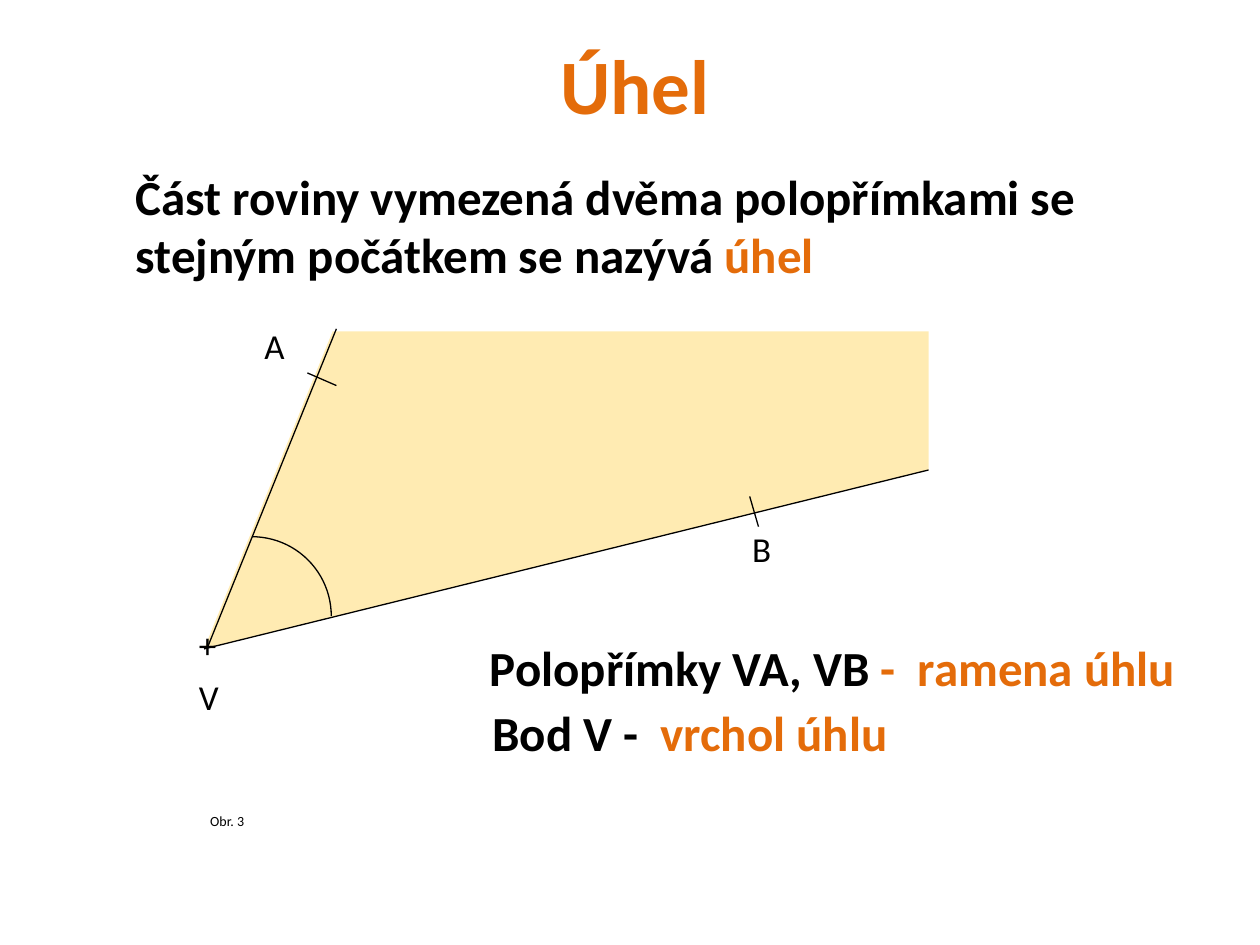
import pptx
import pptx.util
import pptx.dml.color
import pptx.enum.shapes
import pptx.enum.text
import pptx.oxml.ns
from lxml import etree

Inches = pptx.util.Inches
Align = pptx.enum.text.PP_ALIGN
Anchor = pptx.enum.text.MSO_ANCHOR
qn = pptx.oxml.ns.qn

COLORS = {"text": "000000", "accent": "E46C0A", "angle": "FFC000"}


def rgb(name):
    return pptx.dml.color.RGBColor.from_string(COLORS[name])


class SlideBuilder:
    font = "Calibri"
    line_width = pptx.util.Pt(0.75)

    def __init__(self, slide):
        self.shapes = slide.shapes

    def text(self, place, pieces, size, bold=False, align=Align.LEFT,
             anchor=Anchor.TOP, wrap=True, spacing=None):
        """Add a one-paragraph box; pieces are (wording, colour name) pairs."""
        box = self.shapes.add_textbox(*map(Inches, place))
        frame = box.text_frame
        frame.word_wrap = wrap
        frame.vertical_anchor = anchor
        para = frame.paragraphs[0]
        para.alignment = align
        para.line_spacing = spacing
        for wording, color in pieces:
            span = para.add_run()
            span.text = wording
            span.font.name = self.font
            span.font.size = pptx.util.Pt(size)
            span.font.bold = bold
            span.font.color.rgb = rgb(color)

    def point_label(self, letter, left, top):
        self.text((left, top, 0.39, 0.43), [(letter, "text")], 20)

    def outline(self, shape):
        shape.line.color.rgb = rgb("text")
        shape.line.width = self.line_width

    def line(self, start, end):
        line = self.shapes.add_connector(
            pptx.enum.shapes.MSO_CONNECTOR.STRAIGHT, *map(Inches, start + end))
        self.outline(line)
        etree.SubElement(line._element.spPr, qn("a:effectLst"))

    def area(self, points, color, opacity):
        """Add a closed polygon without outline; opacity is in percent."""
        corners = [tuple(map(Inches, point)) for point in points]
        builder = self.shapes.build_freeform(*corners[0])
        builder.add_line_segments(corners[1:], close=True)
        shape = builder.convert_to_shape()
        shape.shadow.inherit = False
        shape.line.fill.background()
        shape.fill.solid()
        shape.fill.fore_color.rgb = rgb(color)
        tint = shape._element.spPr.find(".//" + qn("a:srgbClr"))
        etree.SubElement(tint, qn("a:alpha"), val=str(opacity * 1000))

    def quarter_arc(self, center, radius):
        """Add the arc from the top to the right of a circle."""
        left, top = (value - radius for value in center)
        arc = self.shapes.add_shape(
            pptx.enum.shapes.MSO_SHAPE.ARC,
            *map(Inches, (left, top, 2 * radius, 2 * radius)))
        arc.shadow.inherit = False
        arc.fill.background()
        self.outline(arc)


def main():
    deck = pptx.Presentation()
    deck.slide_width, deck.slide_height = Inches(10), Inches(7.5)
    page = SlideBuilder(deck.slides.add_slide(deck.slide_layouts[6]))

    vertex, arm_end = (1.62, 5.15), (7.37, 3.73)
    page.area([(2.64, 2.63), (7.37, 2.63), arm_end, vertex], "angle", 30)

    page.text((0.59, 0.44, 8.9, 0.63), [("Úhel", "accent")], 44, bold=True,
              align=Align.CENTER, anchor=Anchor.MIDDLE, spacing=0.7)
    page.text((0.98, 1.39, 8.51, 0.79),
              [("Část roviny vymezená dvěma polopřímkami se stejným počátkem "
                "se nazývá ", "text"), ("úhel", "accent")],
              28, bold=True, anchor=Anchor.MIDDLE)
    page.text((3.79, 4.9, 5.7, 0.78),
              [("Polopřímky VA, VB ", "text"), ("-  ramena úhlu", "accent")],
              28, bold=True, anchor=Anchor.MIDDLE)

    page.line((1.65, 5.13), (2.67, 2.61))
    page.line(vertex, arm_end)
    page.line((2.44, 2.96), (2.67, 3.06))
    page.line((5.95, 3.94), (6.02, 4.18))
    page.quarter_arc((2, 4.89), 0.63)

    for letter, left, top in [("+", 1.48, 4.9), ("V", 1.48, 5.31),
                              ("A", 2, 2.53), ("B", 5.87, 4.14)]:
        page.point_label(letter, left, top)

    page.text((3.81, 5.53, 3.37, 0.88),
              [("Bod V -  ", "text"), ("vrchol úhlu", "accent")],
              28, bold=True, wrap=False)
    page.text((1.57, 6.4, 1.18, 0.24), [("Obr. 3", "text")], 8)

    deck.save("out.pptx")


if __name__ == "__main__":
    main()
